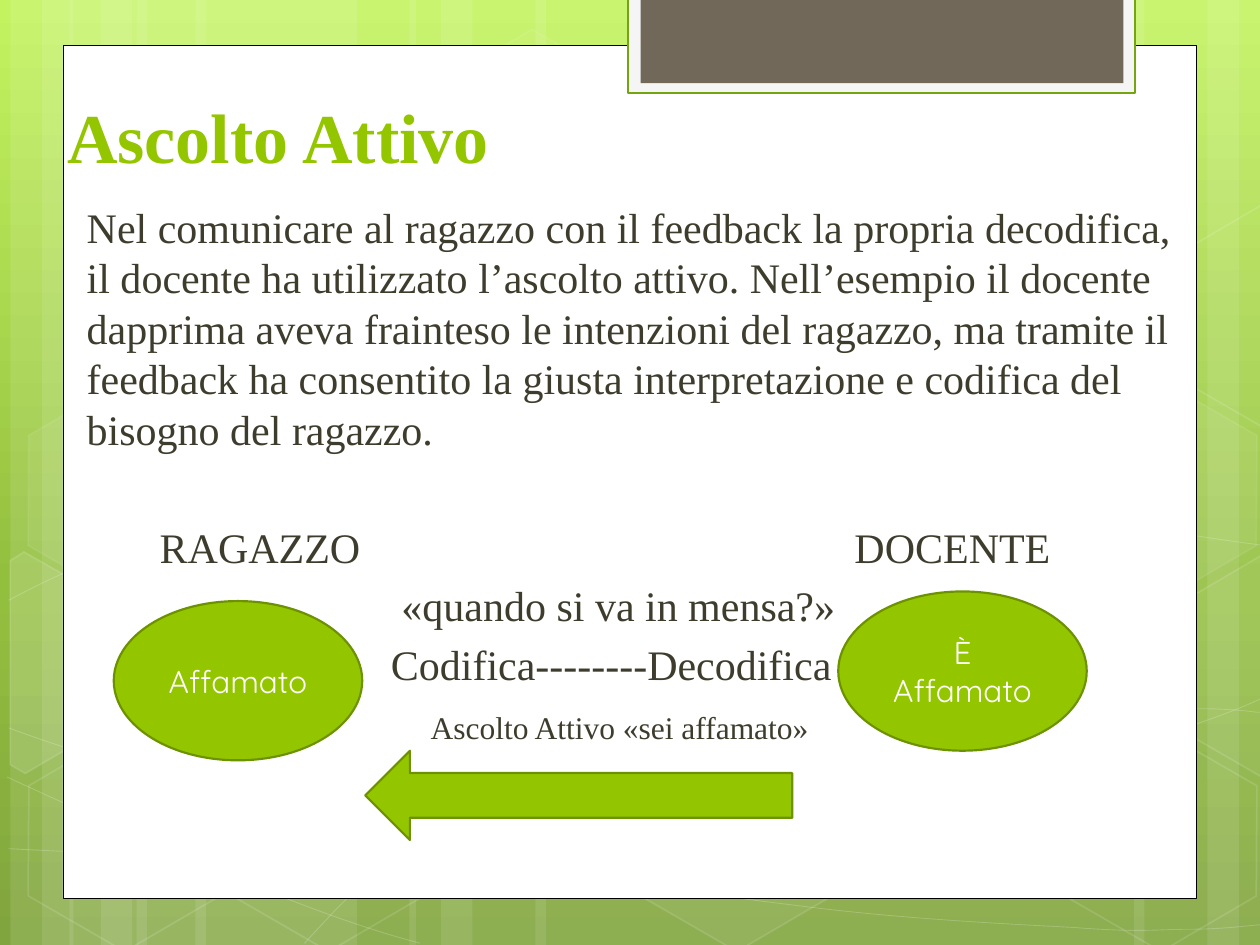
from copy import deepcopy
from dataclasses import dataclass
from typing import NamedTuple, Optional

from lxml import etree
from pptx import Presentation
from pptx.dml.color import RGBColor
from pptx.enum.shapes import MSO_SHAPE
from pptx.enum.text import MSO_ANCHOR, PP_ALIGN
from pptx.oxml.ns import qn
from pptx.slide import Slide
from pptx.util import Pt

RECT, OVAL = MSO_SHAPE.RECTANGLE, MSO_SHAPE.OVAL
HEX, ARROW = MSO_SHAPE.HEXAGON, MSO_SHAPE.RIGHT_ARROW
BOTTOM, MIDDLE, TOP = MSO_ANCHOR.BOTTOM, MSO_ANCHOR.MIDDLE, MSO_ANCHOR.TOP
LEFT, CENTER = PP_ALIGN.LEFT, PP_ALIGN.CENTER

WHITE = RGBColor(0xFF, 0xFF, 0xFF)
BLACK = RGBColor(0, 0, 0)
GREEN = RGBColor(0x94, 0xC6, 0x00)
MOSS = RGBColor(0x6D, 0x92, 0x00)
LEAF = RGBColor(0x74, 0xA5, 0x10)
SMOKE = RGBColor(0xF5, 0xF5, 0xF5)
BROWN = RGBColor(0x71, 0x68, 0x5A)
DARK = RGBColor(0x3E, 0x3D, 0x2D)
LIGHT = RGBColor(0xC3, 0xF3, 0x5F)
MID = RGBColor(0x93, 0xBF, 0x3F)
DEEP = RGBColor(0x81, 0xA5, 0x3E)
SKY = ((0, LIGHT), (0.62, MID), (1, DEEP))
SERIF, SANS = "Times New Roman", "Quicksand"
WIDTH, HEIGHT = 720, 540

WIDE, THIN, MEAN = 126, 36, 60
TRIO = ((78, WIDE), (6, THIN), (24, MEAN))
SHIFT = 33.6
RIGHT = ((528, WIDE), (690, THIN), (648, MEAN))
INNER = ((306, 222), (234, THIN), (252, MEAN))

CELL_W, CELL_H, TILT = 126, 109.4, 30
STEP, ROW, CREST = 58.3, 100.1, 25.4
WEST, EAST = 8, 542
SLANT = 0.285

LABEL, PITCH = 294.4, 33.4


class Box(NamedTuple):
    left: float
    top: float
    width: float
    height: float


class Cell(NamedTuple):
    comb: float
    step: int
    row: int
    glaze: int
    veil: int


@dataclass
class Paint:
    fill: Optional[RGBColor] = None
    glaze: int = 100
    line: Optional[RGBColor] = None
    weight: float = 1
    veil: int = 100


@dataclass
class Style:
    size: float
    font: str
    color: RGBColor
    bold: bool = False
    align: PP_ALIGN = LEFT
    anchor: MSO_ANCHOR = TOP


@dataclass
class Label:
    text: str
    box: Box
    style: Style


CELLS = (
    Cell(WEST, 4, 0, 4, 8), Cell(WEST, 6, 4, 6, 12), Cell(WEST, 0, 4, 0, 12),
    Cell(WEST, 0, 2, 7, 8), Cell(WEST, 2, 4, 0, 12),
    Cell(EAST, 0, 3, 10, 12), Cell(EAST, 1, 4, 0, 12), Cell(EAST, 1, 2, 7, 8),
)
WEST_EDGE = ((5.8, 320.4), (13.7, 315.4), (69.1, 347), (68.4, 410.4), (14.4, 442), (5.8, 437))
EAST_EDGE = ((666.7, 349.2), (720.7, 317.5), (726.5, 321), (726.5, 441.4), (721.4, 444.2),
             (666.7, 412.6))

SWELL = ((5, 485), (44, 487), (83, 489), (137, 488), (191, 487), (258, 486),
         (330, 479), (402, 472), (504, 458), (570, 444), (636, 431), (703, 409), (725, 397))
ARCH = ((5, 343), (26, 332), (47, 321), (87, 310), (128, 300), (186, 284),
        (250, 279), (314, 274), (392, 273), (471, 279), (550, 284), (682, 307), (725, 312))
SLOPE = ((4, 444), (91, 484), (178, 523), (240, 539))
FALL = ((5, 416), (27, 424), (50, 432), (92, 443), (134, 454), (197, 472),
        (257, 485), (317, 497), (392, 510), (452, 517), (512, 525), (576, 528),
        (614, 530), (652, 533), (662, 531), (680, 531), (699, 531), (712, 529), (725, 528))
CLIMB = ((174, 539), (187, 525), (200, 510), (217, 498), (235, 485), (259, 470),
         (279, 460), (300, 450), (312, 446), (338, 438), (364, 431), (413, 421),
         (438, 416), (464, 411), (467, 411), (490, 409), (512, 407), (547, 405),
         (572, 405), (597, 404), (638, 405), (638, 405), (654, 405), (670, 405),
         (686, 405), (699, 405), (711, 406), (718, 407), (724, 407), (722, 407), (724, 408))

HEAD = Style(40, SERIF, GREEN, bold=True, anchor=BOTTOM)
BODY = Style(24, SERIF, DARK)
SMALL = Style(18, SERIF, DARK)
NEED = Style(18, SANS, WHITE, align=CENTER, anchor=MIDDLE)
PROSE = ("Nel comunicare al ragazzo con il feedback la propria decodifica, il docente "
         "ha utilizzato l’ascolto attivo. Nell’esempio il docente dapprima aveva "
         "frainteso le intenzioni del ragazzo, ma tramite il feedback ha consentito "
         "la giusta interpretazione e codifica del bisogno del ragazzo.")


def level(row: int, left: float, width: float) -> Box:
    return Box(left, LABEL + row * PITCH, width, 36)


LABELS = (
    Label("Ascolto Attivo", Box(31.4, 15, 553, 90), HEAD),
    Label(PROSE, Box(42.5, 111.6, 640.8, 160), BODY),
    Label("RAGAZZO", level(0, 84.2, 150), BODY),
    Label("DOCENTE", level(0, 481.2, 150), BODY),
    Label("«quando si va in mensa?»", level(1, 222.3, 280), BODY),
    Label("Codifica--------Decodifica", level(2, 216.3, 280), BODY),
    Label("Ascolto Attivo «sei affamato»", Box(239, 400.8, 240, 28), SMALL),
)
NEEDS = (
    Label("Affamato", Box(65, 343.5, 142, 91), NEED),
    Label("È Affamato", Box(479, 338, 142, 91), NEED),
)


def fade(shape, where: str, alpha: int) -> None:
    if alpha < 100:
        route = "/".join(qn(tag) for tag in where.split())
        color = shape.element.spPr.find(route)
        etree.SubElement(color, qn("a:alpha"), val=str(alpha * 1000))


def coat(shape, paint: Paint) -> None:
    shape.shadow.inherit = False
    if paint.fill is None:
        shape.fill.background()
    else:
        shape.fill.solid()
        shape.fill.fore_color.rgb = paint.fill
        fade(shape, "a:solidFill a:srgbClr", paint.glaze)
    if paint.line is None:
        shape.line.fill.background()
    else:
        shape.line.color.rgb = paint.line
        shape.line.width = Pt(paint.weight)
        fade(shape, "a:ln a:solidFill a:srgbClr", paint.veil)


def draw(slide: Slide, kind: MSO_SHAPE, box: Box, paint: Paint, turn: float = 0):
    shape = slide.shapes.add_shape(kind, *map(Pt, box))
    shape.rotation = turn
    coat(shape, paint)
    return shape


def trace(slide: Slide, spots: tuple, paint: Paint, closed: bool = True, lift: float = 0):
    points = [(Pt(x), Pt(y - lift)) for x, y in spots]
    pen = slide.shapes.build_freeform(*points[0])
    pen.add_line_segments(points[1:], close=closed)
    shape = pen.convert_to_shape()
    coat(shape, paint)
    return shape


def bend(shape) -> None:
    legs = list(shape.element.iter(qn("a:lnTo")))
    for start in range(0, len(legs), 3):
        curve = etree.Element(qn("a:cubicBezTo"))
        legs[start].addprevious(curve)
        for leg in legs[start:start + 3]:
            curve.append(leg[0])
            leg.getparent().remove(leg)


def write(frame, text: str, style: Style) -> None:
    frame.word_wrap = True
    frame.vertical_anchor = style.anchor
    para = frame.paragraphs[0]
    para.alignment = style.align
    run = para.add_run()
    run.text = text
    run.font.size = Pt(style.size)
    run.font.name = style.font
    run.font.bold = style.bold
    run.font.color.rgb = style.color


def glass(glaze: int, veil: int) -> Paint:
    return Paint(WHITE if glaze else None, glaze, WHITE, 1, veil)


def shade(slide: Slide) -> None:
    fill = slide.background.fill
    fill.gradient()
    fill.gradient_angle = 270
    stops = slide.element.find(".//" + qn("a:gsLst"))
    stops.append(deepcopy(stops[-1]))
    for stop, (spot, color) in zip(fill.gradient_stops, SKY):
        stop.position = spot
        stop.color.rgb = color


def stripe(slide: Slide) -> None:
    twin = tuple((left + SHIFT, width) for left, width in TRIO)
    for left, width in TRIO + twin + RIGHT + INNER:
        draw(slide, RECT, Box(left, 0, width, HEIGHT), Paint(WHITE, 10))


def wave(slide: Slide) -> None:
    for spots in (SWELL, ARCH, SLOPE, FALL, CLIMB):
        bend(trace(slide, spots, Paint(line=WHITE, weight=0.5, veil=20), closed=False))


def comb(slide: Slide) -> None:
    for cell in CELLS:
        box = Box(cell.comb + cell.step * STEP, CREST + cell.row * ROW, CELL_W, CELL_H)
        shape = draw(slide, HEX, box, glass(cell.glaze, cell.veil), TILT)
        shape.adjustments[0] = SLANT
    trace(slide, WEST_EDGE, glass(10, 12))
    trace(slide, EAST_EDGE, glass(4, 12))
    trace(slide, EAST_EDGE, glass(0, 12), lift=2 * ROW)


def panel(slide: Slide) -> None:
    draw(slide, RECT, Box(36, 26, 648, 487.4), Paint(WHITE, line=BLACK, weight=0.5))
    draw(slide, RECT, Box(359, -1.5, 289.5, 54.7), Paint(SMOKE, line=LEAF, weight=1.25))
    draw(slide, RECT, Box(366, -1.5, 276, 49), Paint(BROWN))


def talk(slide: Slide) -> None:
    for label in LABELS:
        write(slide.shapes.add_textbox(*map(Pt, label.box)).text_frame, label.text, label.style)
    lime = Paint(GREEN, line=MOSS, weight=1.25)
    for need in NEEDS:
        write(draw(slide, OVAL, need.box, lime).text_frame, need.text, need.style)
    draw(slide, ARROW, Box(208.7, 429, 244, 51), lime, 180)


def main() -> None:
    deck = Presentation()
    deck.slide_width, deck.slide_height = Pt(WIDTH), Pt(HEIGHT)
    slide = deck.slides.add_slide(deck.slide_layouts[6])
    for layer in (shade, stripe, wave, comb, panel, talk):
        layer(slide)
    deck.save("out.pptx")


if __name__ == "__main__":
    main()
